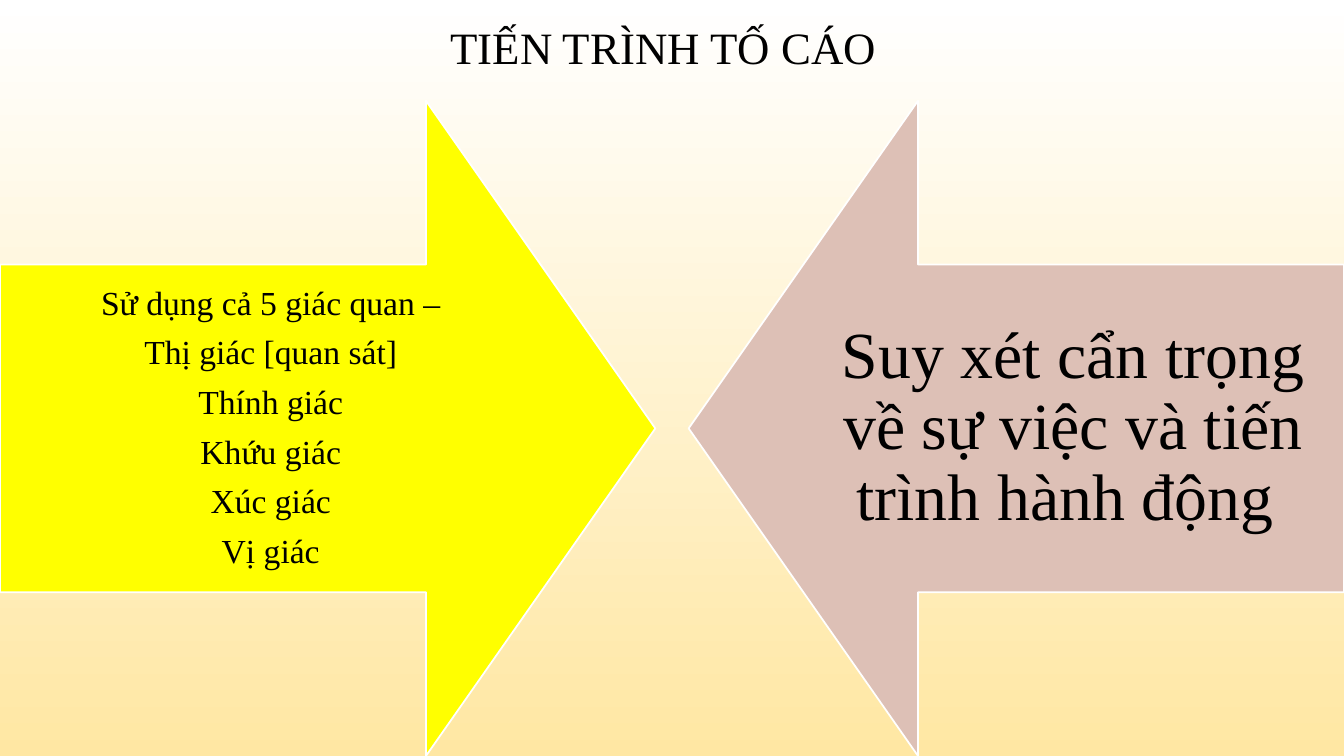
from dataclasses import dataclass

from pptx import Presentation
from pptx import util as u
from pptx.dml.color import RGBColor
from pptx.enum import shapes, text


@dataclass(frozen=True)
class Theme:
    font: str = "Times New Roman"
    ink: str = "000000"
    outline: str = "FFFFFF"
    sky: tuple = ("FFFFFF", "FFE7A3")
    senses: str = "FFFF00"
    reflection: str = "DDC0B6"
    title_size: float = 32
    senses_size: float = 24
    reflection_size: float = 47


theme = Theme()
WIDTH, HEIGHT = 13.33, 7.5
ARROW = 6.5
ARROW_TOP = HEIGHT - ARROW
LABEL_WIDTH, LABEL_HEIGHT = 5.37, ARROW / 2
LABEL_TOP = ARROW_TOP + ARROW / 4


def write(frame, lines, size, inset, after=0):
    frame.text = "\n".join(lines)
    frame.word_wrap = True
    frame.auto_size = text.MSO_AUTO_SIZE.NONE
    frame.vertical_anchor = text.MSO_ANCHOR.MIDDLE
    frame.margin_left = frame.margin_right = u.Inches(inset)
    frame.margin_top = frame.margin_bottom = u.Inches(min(inset, 0.37))
    for line in frame.paragraphs:
        line.alignment = text.PP_ALIGN.CENTER
        line.line_spacing = 0.9
        line.space_before = u.Pt(0)
        line.space_after = u.Pt(after)
        for run in line.runs:
            run.font.name = theme.font
            run.font.size = u.Pt(size)
            run.font.color.rgb = RGBColor.from_string(theme.ink)


deck = Presentation()
deck.slide_width, deck.slide_height = u.Inches(WIDTH), u.Inches(HEIGHT)
slide = deck.slides.add_slide(deck.slide_layouts[5])

sky = slide.background.fill
sky.gradient()
sky.gradient_angle = 270
for stop, color in zip(sky.gradient_stops, theme.sky):
    stop.color.rgb = RGBColor.from_string(color)

heading = slide.shapes.title
heading.left, heading.top = u.Inches(0.83), u.Inches(0.11)
heading.width, heading.height = u.Inches(11.5), u.Inches(0.78)
write(heading.text_frame, ["TIẾN TRÌNH TỐ CÁO"], theme.title_size, 0.1)

senses = [
    "Sử dụng cả 5 giác quan –",
    "Thị giác [quan sát]",
    "Thính giác",
    "Khứu giác",
    "Xúc giác",
    "Vị giác",
]
reflection = ["Suy xét cẩn trọng về sự việc và tiến trình hành động "]
sides = [
    (0, 0, 270, theme.senses, senses, theme.senses_size, 0.19),
    (WIDTH - ARROW, WIDTH - LABEL_WIDTH, 90, theme.reflection,
     reflection, theme.reflection_size, 0.37),
]

for arrow_left, label_left, turn, color, lines, size, inset in sides:
    arrow = slide.shapes.add_shape(
        shapes.MSO_SHAPE.DOWN_ARROW, u.Inches(arrow_left), u.Inches(ARROW_TOP),
        u.Inches(ARROW), u.Inches(ARROW))
    arrow.rotation = turn
    arrow.adjustments[0], arrow.adjustments[1] = 0.5, 0.35
    arrow.shadow.inherit = False
    arrow.fill.solid()
    arrow.fill.fore_color.rgb = RGBColor.from_string(color)
    arrow.line.color.rgb = RGBColor.from_string(theme.outline)
    arrow.line.width = u.Pt(1.25)

    label = slide.shapes.add_textbox(
        u.Inches(label_left), u.Inches(LABEL_TOP),
        u.Inches(LABEL_WIDTH), u.Inches(LABEL_HEIGHT))
    write(label.text_frame, lines, size, inset, after=9.5)

deck.save("out.pptx")
